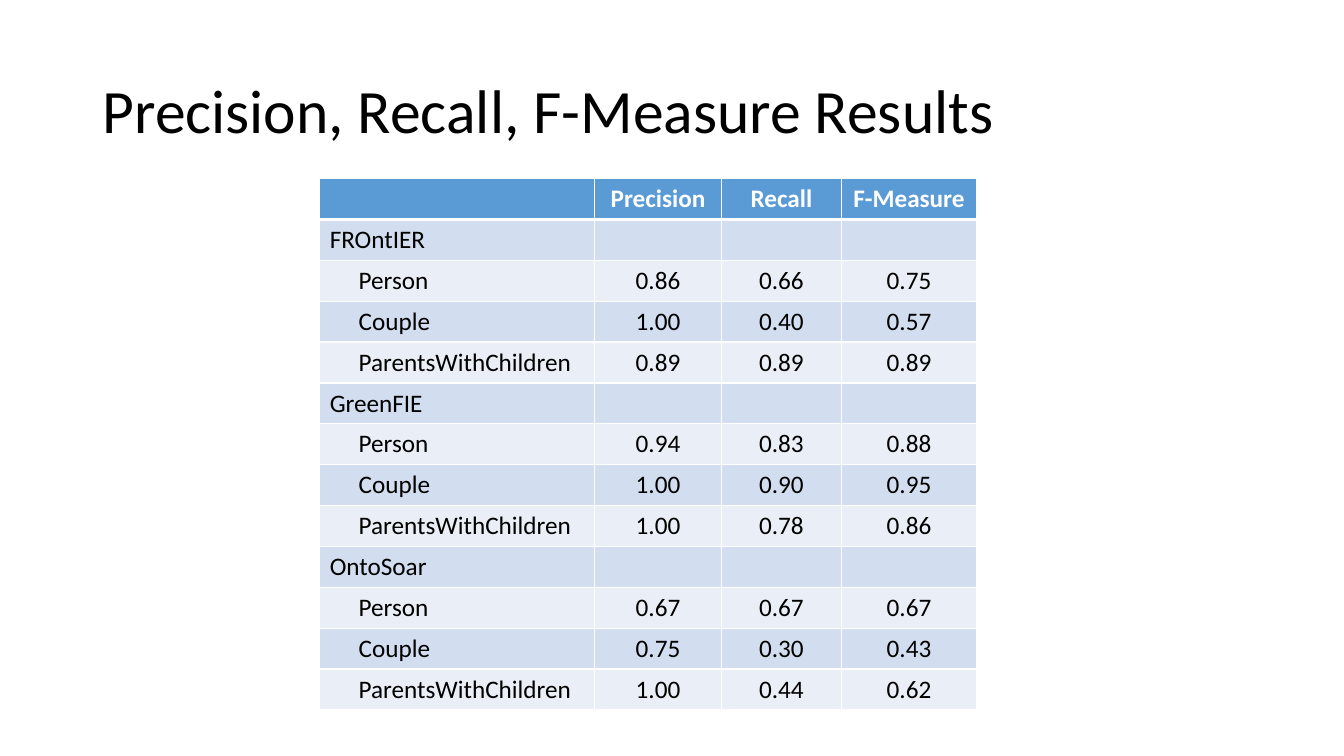
from lxml import etree
from pptx import Presentation
from pptx.dml.color import RGBColor
from pptx.enum.text import MSO_ANCHOR, PP_ALIGN
from pptx.oxml.ns import qn
from pptx.util import Cm, Pt

CENTER, LEFT = PP_ALIGN.CENTER, PP_ALIGN.LEFT
MIDDLE = MSO_ANCHOR.MIDDLE
TITLE_ONLY = 5

COLORS = {
    "text": "000000",
    "header text": "FFFFFF",
    "header": "5B9BD5",
    "dark band": "D2DEEF",
    "light band": "EAEFF7",
    "border": "FFFFFF",
}

HEADINGS = ["", "Precision", "Recall", "F-Measure"]
MEASURED = ["Person", "Couple", "ParentsWithChildren"]
RESULTS = {
    "FROntIER": [(0.86, 0.66, 0.75), (1.00, 0.40, 0.57), (0.89, 0.89, 0.89)],
    "GreenFIE": [(0.94, 0.83, 0.88), (1.00, 0.90, 0.95), (1.00, 0.78, 0.86)],
    "OntoSoar": [(0.67, 0.67, 0.67), (0.75, 0.30, 0.43), (1.00, 0.44, 0.62)],
}
COLUMN_WIDTHS = [6.92, 3.21, 3.01, 3.42]
ROW_HEIGHT = 1.03
CELL_MARGIN, INDENTED_MARGIN = 0.25, 0.98


def result_rows():
    """Return a heading row for each system, followed by its scores."""
    rows = []
    for system, scores in RESULTS.items():
        rows.append([system, "", "", ""])
        for name, values in zip(MEASURED, scores):
            rows.append([name] + [f"{value:.2f}" for value in values])
    return rows


class SlideBuilder:
    def __init__(self, page, font="Calibri"):
        self.page = page
        self.font = font

    def set_text(self, frame, text, size, color="text", bold=False, align=LEFT):
        frame.text = text
        para = frame.paragraphs[0]
        para.alignment = align
        for span in para.runs:
            span.font.name = self.font
            span.font.size = Pt(size)
            span.font.bold = bold
            span.font.color.rgb = RGBColor.from_string(COLORS[color])
        return para

    def title(self, text, left, top, width, height):
        box = self.page.shapes.title
        box.left, box.top = Cm(left), Cm(top)
        box.width, box.height = Cm(width), Cm(height)
        box.text_frame.vertical_anchor = MIDDLE
        self.set_text(box.text_frame, text, 44).line_spacing = 0.9

    def borders(self, cell, top, bottom):
        """Draw the cell borders; top and bottom are widths in points."""
        properties = cell._tc.get_or_add_tcPr()
        widths = {"a:lnL": 1, "a:lnR": 1, "a:lnT": top, "a:lnB": bottom}
        for position, (tag, width) in enumerate(widths.items()):
            line = etree.Element(qn(tag), w=str(Pt(width)))
            fill = etree.SubElement(line, qn("a:solidFill"))
            etree.SubElement(fill, qn("a:srgbClr"), val=COLORS["border"])
            properties.insert(position, line)

    def table(self, rows, left, top):
        """Add a banded table whose first row is the header."""
        frame = self.page.shapes.add_table(
            len(rows), len(COLUMN_WIDTHS), Cm(left), Cm(top),
            Cm(sum(COLUMN_WIDTHS)), Cm(ROW_HEIGHT * len(rows)))
        table = frame.table
        for column, width in zip(table.columns, COLUMN_WIDTHS):
            column.width = Cm(width)
        for row_index, values in enumerate(rows):
            table.rows[row_index].height = Cm(ROW_HEIGHT)
            header = row_index == 0
            band = "dark band" if row_index % 2 else "light band"
            for column_index, value in enumerate(values):
                cell = table.cell(row_index, column_index)
                indented = column_index == 0 and value in MEASURED
                cell.margin_left = Cm(INDENTED_MARGIN if indented else CELL_MARGIN)
                cell.fill.solid()
                cell.fill.fore_color.rgb = RGBColor.from_string(
                    COLORS["header" if header else band])
                self.set_text(cell.text_frame, value, 18,
                              "header text" if header else "text", header,
                              CENTER if column_index else LEFT)
                self.borders(cell, 3 if row_index == 1 else 1, 3 if header else 1)


def main():
    deck = Presentation()
    deck.slide_width, deck.slide_height = Cm(33.87), Cm(19.05)
    page = deck.slides.add_slide(deck.slide_layouts[TITLE_ONLY])
    builder = SlideBuilder(page)
    builder.title("Precision, Recall, F-Measure Results", 2.33, 1.01, 29.21, 3.68)
    builder.table([HEADINGS] + result_rows(), 8.06, 4.5)
    deck.save("out.pptx")


if __name__ == "__main__":
    main()
